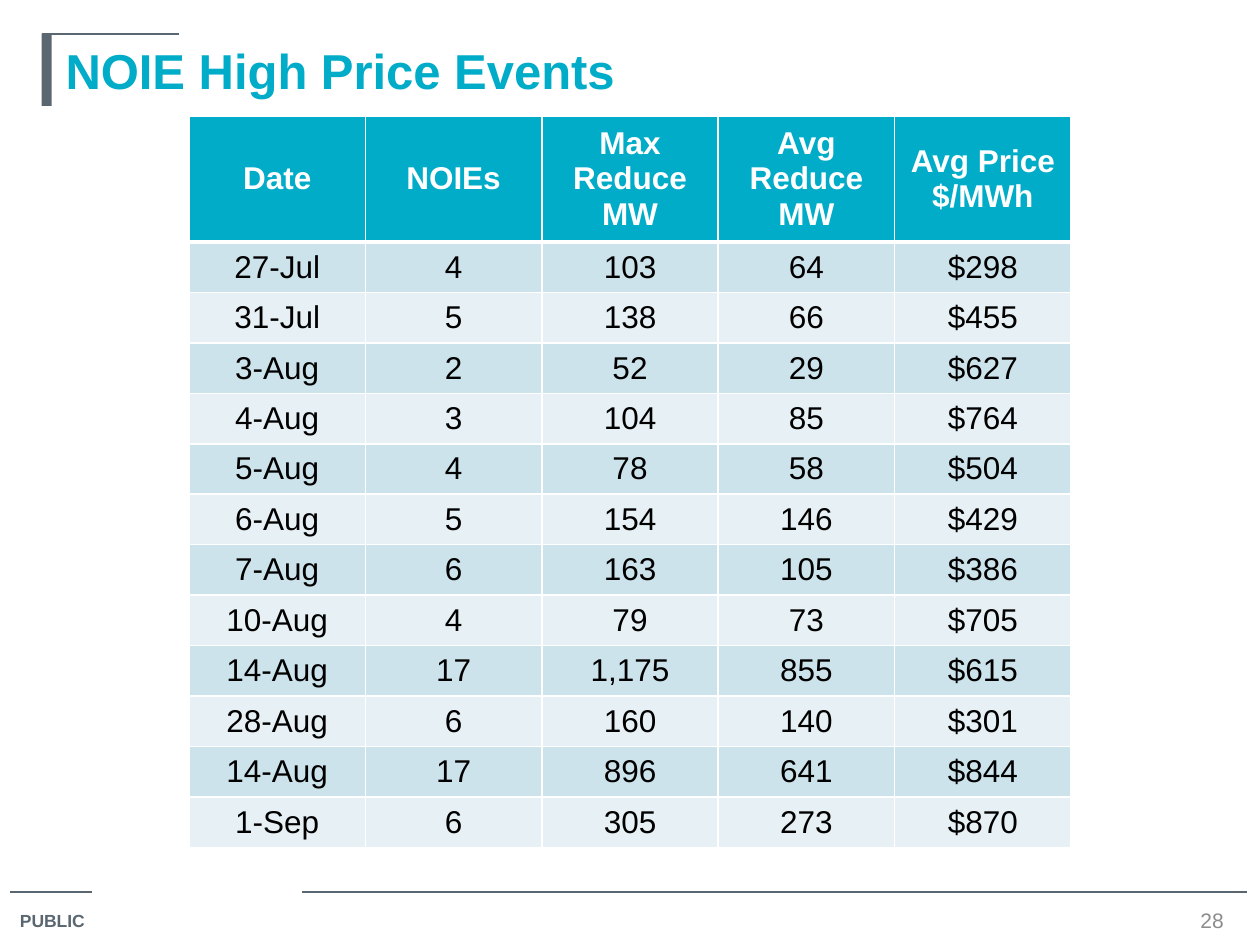
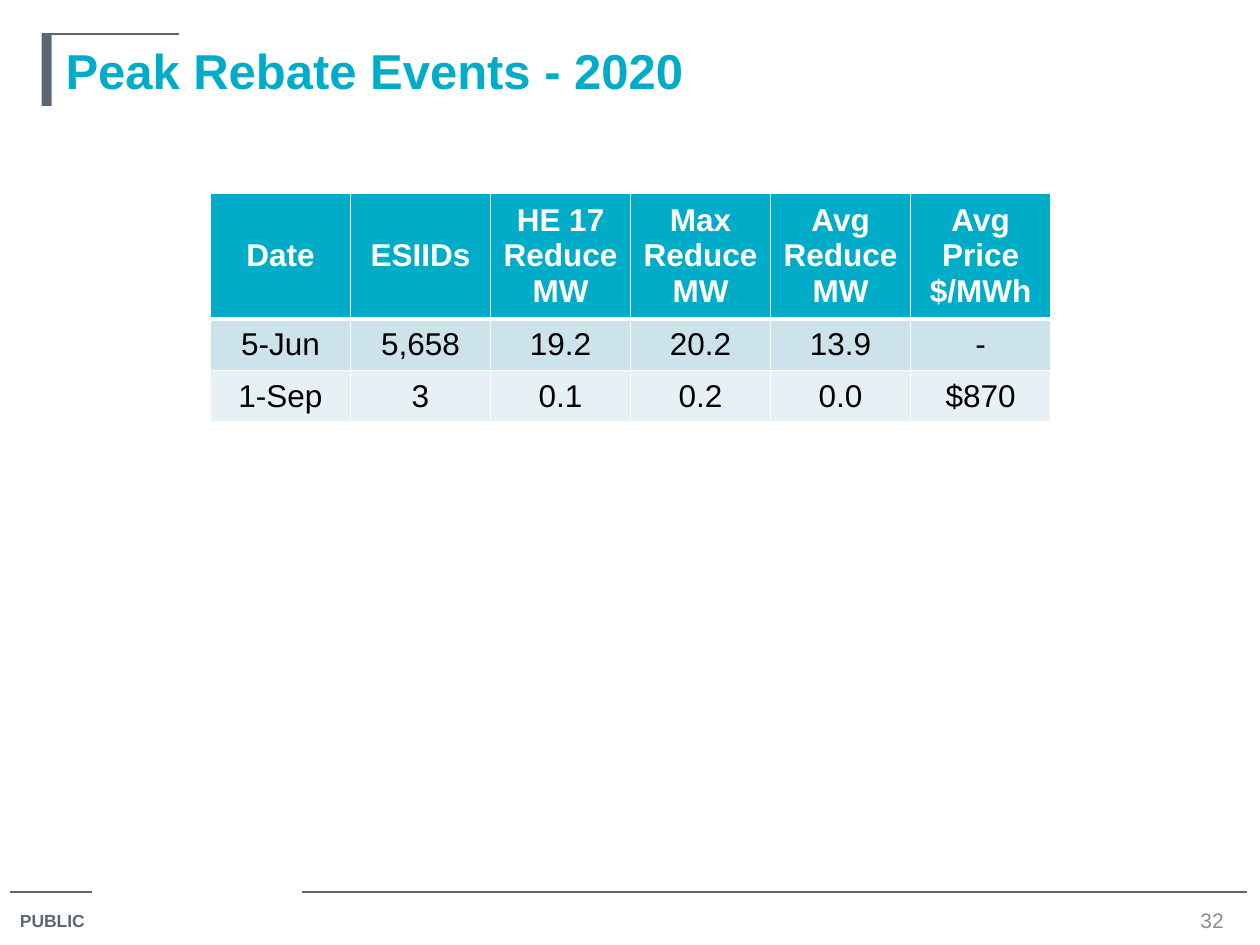
import dataclasses

import lxml.etree
import pptx
import pptx.dml.color
import pptx.enum.shapes
import pptx.enum.text
import pptx.oxml.ns
import pptx.util

Inches = pptx.util.Inches
Pt = pptx.util.Pt
ANCHOR = pptx.enum.text.MSO_ANCHOR
ALIGN = pptx.enum.text.PP_ALIGN


@dataclasses.dataclass(frozen=True)
class Theme:
    font: str = "Arial"
    accent: str = "00ACC8"
    slate: str = "5B6770"
    number: str = "8C8C8C"
    white: str = "FFFFFF"
    black: str = "000000"
    bands: tuple = ("CCE3EB", "E7F1F5")
    title_size: int = 28
    table_size: int = 18
    number_size: int = 12
    label_size: int = 10
    rule_width: float = 0.75
    border_width: int = 1
    header_border_width: int = 3


THEME = Theme()

PRICE_EVENTS = [
    ("Date", "NOIEs", "Max Reduce MW", "Avg Reduce MW", "Avg Price $/MWh"),
    ("27-Jul", "4", "103", "64", "$298"),
    ("31-Jul", "5", "138", "66", "$455"),
    ("3-Aug", "2", "52", "29", "$627"),
    ("4-Aug", "3", "104", "85", "$764"),
    ("5-Aug", "4", "78", "58", "$504"),
    ("6-Aug", "5", "154", "146", "$429"),
    ("7-Aug", "6", "163", "105", "$386"),
    ("10-Aug", "4", "79", "73", "$705"),
    ("14-Aug", "17", "1,175", "855", "$615"),
    ("28-Aug", "6", "160", "140", "$301"),
    ("14-Aug", "17", "896", "641", "$844"),
    ("1-Sep", "6", "305", "273", "$870"),
]

REBATE_EVENTS = [
    ("Date", "ESIIDs", "HE 17 Reduce MW", "Max Reduce MW", "Avg Reduce MW", "Avg Price $/MWh"),
    ("5-Jun", "5,658", "19.2", "20.2", "13.9", "-"),
    ("1-Sep", "3", "0.1", "0.2", "0.0", "$870"),
]


def rgb(value):
    return pptx.dml.color.RGBColor.from_string(value)


def write(text_frame, text, size, color, bold=False, align=ALIGN.LEFT):
    text_frame.text = text
    paragraph = text_frame.paragraphs[0]
    paragraph.alignment = align
    font = paragraph.font
    font.name, font.size, font.bold = THEME.font, Pt(size), bold
    font.color.rgb = rgb(color)


def add_rule(slide, left, top, width):
    rule = slide.shapes.add_connector(
        pptx.enum.shapes.MSO_CONNECTOR.STRAIGHT,
        Inches(left), Inches(top), Inches(left + width), Inches(top))
    rule.line.color.rgb = rgb(THEME.slate)
    rule.line.width = Pt(THEME.rule_width)
    properties = rule._element.spPr
    lxml.etree.SubElement(properties, pptx.oxml.ns.qn("a:effectLst"))


def add_label(slide, left, top, width, height, anchor, *style):
    label = slide.shapes.add_textbox(Inches(left), Inches(top), Inches(width), Inches(height))
    label.text_frame.word_wrap = True
    label.text_frame.vertical_anchor = anchor
    write(label.text_frame, *style)


def add_title(slide, text, left, top, width, height):
    bar_left = left - 0.09
    bar = slide.shapes.add_shape(
        pptx.enum.shapes.MSO_SHAPE.RECTANGLE,
        Inches(bar_left), Inches(top), Inches(0.08), Inches(height))
    bar.shadow.inherit = False
    bar.fill.solid()
    bar.fill.fore_color.rgb = rgb(THEME.slate)
    bar.line.fill.background()
    add_rule(slide, bar_left, top, 1.09)

    title = slide.shapes.title
    title.left, title.top = Inches(left), Inches(top)
    title.width, title.height = Inches(width), Inches(height)
    title.text_frame.auto_size = pptx.enum.text.MSO_AUTO_SIZE.NONE
    title.text_frame.vertical_anchor = ANCHOR.MIDDLE
    write(title.text_frame, text, THEME.title_size, THEME.accent, True)


def add_footer(slide, number, left, top, width):
    add_rule(slide, left, top, 0.65)
    add_rule(slide, left + 2.32, top, width - 2.32)
    add_label(slide, left - 0.02, top + 0.09, 0.77, 0.28, ANCHOR.TOP,
              "PUBLIC", THEME.label_size, THEME.slate, True)
    add_label(slide, left + width - 0.57, top + 0.1, 0.58, 0.24, ANCHOR.MIDDLE,
              str(number), THEME.number_size, THEME.number, False, ALIGN.CENTER)


def set_borders(cell, top_width, bottom_width):
    properties = cell._tc.get_or_add_tcPr()
    widths = {"lnL": THEME.border_width, "lnR": THEME.border_width,
              "lnT": top_width, "lnB": bottom_width}
    for side, width in widths.items():
        line = lxml.etree.SubElement(
            properties, pptx.oxml.ns.qn("a:" + side), w=str(int(Pt(width))))
        fill = lxml.etree.SubElement(line, pptx.oxml.ns.qn("a:solidFill"))
        lxml.etree.SubElement(fill, pptx.oxml.ns.qn("a:srgbClr"), val=THEME.white)


def format_cell(cell, text, row):
    header = row == 0
    top_width = THEME.header_border_width if row == 1 else THEME.border_width
    bottom_width = THEME.header_border_width if header else THEME.border_width
    set_borders(cell, top_width, bottom_width)
    cell.fill.solid()
    cell.fill.fore_color.rgb = rgb(THEME.accent if header else THEME.bands[(row - 1) % 2])
    cell.vertical_anchor = ANCHOR.MIDDLE
    cell.margin_left = cell.margin_right = Inches(0.09)
    write(cell.text_frame, text, THEME.table_size,
          THEME.white if header else THEME.black, header, ALIGN.CENTER)


def add_event_table(slide, rows, left, top, width, header_height, row_height):
    height = header_height + row_height * (len(rows) - 1)
    table = slide.shapes.add_table(
        len(rows), len(rows[0]),
        Inches(left), Inches(top), Inches(width), Inches(height)).table
    table.horz_banding = False
    for column in table.columns:
        column.width = Inches(width / len(rows[0]))
    for row, values in enumerate(rows):
        table.rows[row].height = Inches(row_height if row else header_height)
        for column, text in enumerate(values):
            format_cell(table.cell(row, column), text, row)


def add_event_slide(presentation, title, number, rows, *table_box):
    slide = presentation.slides.add_slide(presentation.slide_layouts[5])
    add_footer(slide, number, 0.08, 7.08, 9.82)
    add_title(slide, title, 0.42, 0.27, 9.25, 0.57)
    add_event_table(slide, rows, *table_box)


def main():
    presentation = pptx.Presentation()
    presentation.slide_width = Inches(10)
    presentation.slide_height = Inches(7.5)
    add_event_slide(presentation, "NOIE High Price Events", 28, PRICE_EVENTS,
                    1.5, 0.92, 7, 0.97, 0.39)
    add_event_slide(presentation, "Peak Rebate Events - 2020", 32, REBATE_EVENTS,
                    1.67, 1.53, 6.67, 0.94, 0.41)
    presentation.save("out.pptx")


if __name__ == "__main__":
    main()
